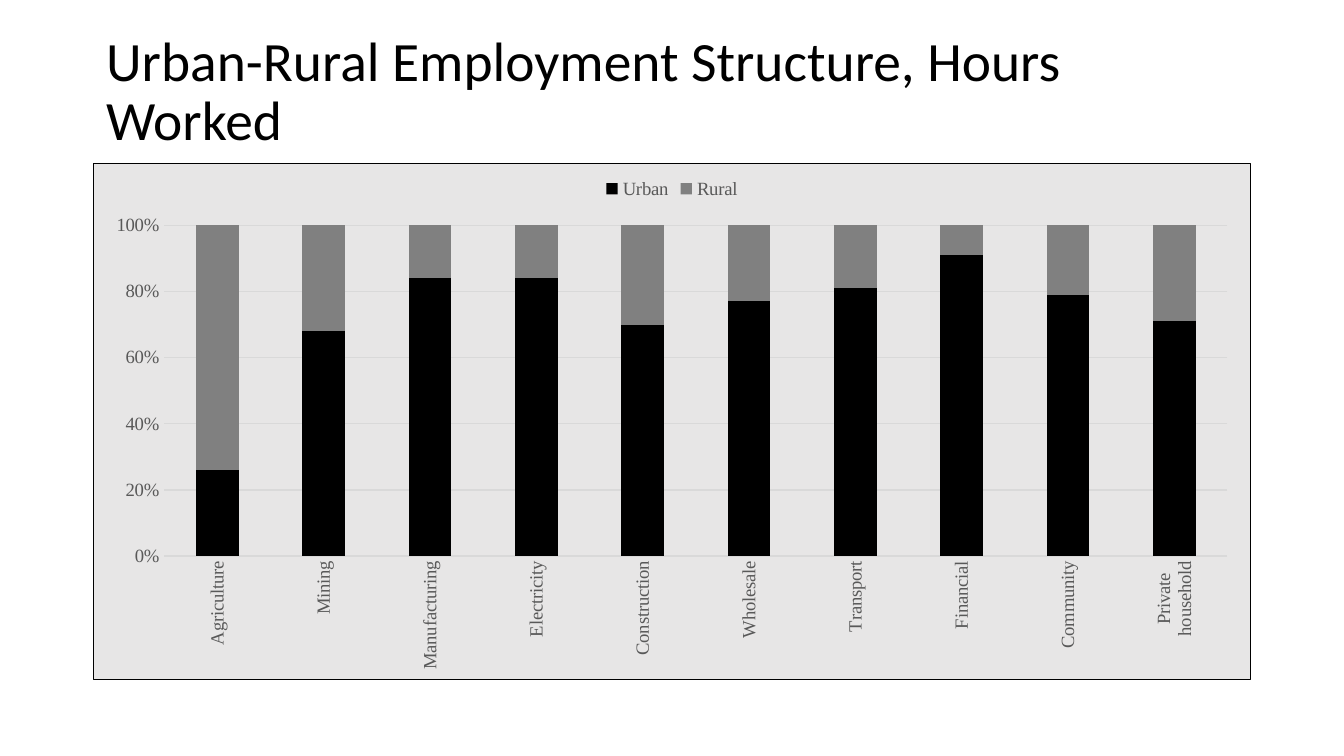
from dataclasses import dataclass

import pptx
import pptx.chart.data
import pptx.dml.color
import pptx.enum.chart
import pptx.enum.text
import pptx.oxml
import pptx.oxml.ns
import pptx.util


@dataclass(frozen=True)
class Theme:
    title_font: str = "Calibri"
    chart_font: str = "Times New Roman"
    title_size: float = 29.7
    chart_size: float = 10
    line_width: float = 0.75
    ink: str = "000000"
    label: str = "595959"
    grid: str = "D9D9D9"
    panel: str = "E7E6E6"
    urban: str = "000000"
    rural: str = "808080"


THEME = Theme()
WIDTH = pptx.util.Inches(10)
HEIGHT = WIDTH * 9 // 16
MARGIN = 0.069 * WIDTH
CONTENT_WIDTH = WIDTH - 2 * MARGIN
URBAN_SHARE = {
    "Agriculture": 26,
    "Mining": 68,
    "Manufacturing": 84,
    "Electricity": 84,
    "Construction": 70,
    "Wholesale": 77,
    "Transport": 81,
    "Financial": 91,
    "Community": 79,
    "Private household": 71,
}


def rgb(value):
    return pptx.dml.color.RGBColor.from_string(value)


def style_font(font, name, size, color):
    font.name = name
    font.size = pptx.util.Pt(size)
    font.color.rgb = rgb(color)


def style_label(font):
    style_font(font, THEME.chart_font, THEME.chart_size, THEME.label)


def style_line(line, color):
    line.color.rgb = rgb(color)
    line.width = pptx.util.Pt(THEME.line_width)


def content_box(top, height):
    return [int(v) for v in (MARGIN, top * HEIGHT, CONTENT_WIDTH, height * HEIGHT)]


def add_title(s, text):
    sp = s.shapes.title
    sp.left, sp.top, sp.width, sp.height = content_box(0.053, 0.14)
    tf = sp.text_frame
    tf.text = text
    tf.word_wrap = True
    tf.auto_size = pptx.enum.text.MSO_AUTO_SIZE.NONE
    tf.vertical_anchor = pptx.enum.text.MSO_ANCHOR.MIDDLE
    p = tf.paragraphs[0]
    p.alignment = pptx.enum.text.PP_ALIGN.LEFT
    p.line_spacing = 0.9
    style_font(p.runs[0].font, THEME.title_font, THEME.title_size, THEME.ink)


def fill_chart_area(chart):
    ns = pptx.oxml.ns.nsdecls("c", "a")
    width = pptx.util.Pt(THEME.line_width)
    area = pptx.oxml.parse_xml(
        f'<c:spPr {ns}><a:solidFill><a:srgbClr val="{THEME.panel}"/></a:solidFill>'
        f'<a:ln w="{width}"><a:solidFill><a:srgbClr val="{THEME.ink}"/></a:solidFill>'
        "</a:ln></c:spPr>"
    )
    chart.element.find(pptx.oxml.ns.qn("c:chart")).addnext(area)


def style_axes(chart):
    for axis in (chart.category_axis, chart.value_axis):
        axis.major_tick_mark = pptx.enum.chart.XL_TICK_MARK.NONE
        axis.minor_tick_mark = pptx.enum.chart.XL_TICK_MARK.NONE
        style_label(axis.tick_labels.font)

    categories = chart.category_axis
    style_line(categories.format.line, THEME.grid)
    body = categories._element.find(".//" + pptx.oxml.ns.qn("a:bodyPr"))
    body.set("rot", "-5400000")
    body.set("vert", "horz")

    values = chart.value_axis
    values.minimum_scale, values.maximum_scale, values.major_unit = 0, 1, 0.2
    values.format.line.fill.background()
    style_line(values.major_gridlines.format.line, THEME.grid)
    values.tick_labels.number_format = "0%"
    values.tick_labels.number_format_is_linked = False


def add_employment_chart(s):
    data = pptx.chart.data.CategoryChartData()
    data.categories = list(URBAN_SHARE)
    data.add_series("Urban", URBAN_SHARE.values())
    data.add_series("Rural", [100 - share for share in URBAN_SHARE.values()])
    kind = pptx.enum.chart.XL_CHART_TYPE.COLUMN_STACKED_100
    chart = s.shapes.add_chart(kind, *content_box(0.215, 0.685), data).chart
    style_font(chart.font, THEME.chart_font, THEME.chart_size, THEME.ink)
    chart.has_title = False
    chart.has_legend = True
    chart.legend.position = pptx.enum.chart.XL_LEGEND_POSITION.TOP
    chart.legend.include_in_layout = False
    style_label(chart.legend.font)

    plot = chart.plots[0]
    plot.vary_by_categories = False
    plot.gap_width, plot.overlap = 150, 100
    for series, color in zip(plot.series, (THEME.urban, THEME.rural)):
        series.format.fill.solid()
        series.format.fill.fore_color.rgb = rgb(color)
    style_axes(chart)
    fill_chart_area(chart)


def main():
    prs = pptx.Presentation()
    prs.slide_width, prs.slide_height = WIDTH, HEIGHT
    s = prs.slides.add_slide(prs.slide_layouts.get_by_name("Title Only"))
    add_title(s, "Urban-Rural Employment Structure, Hours Worked")
    add_employment_chart(s)
    prs.save("out.pptx")


if __name__ == "__main__":
    main()
